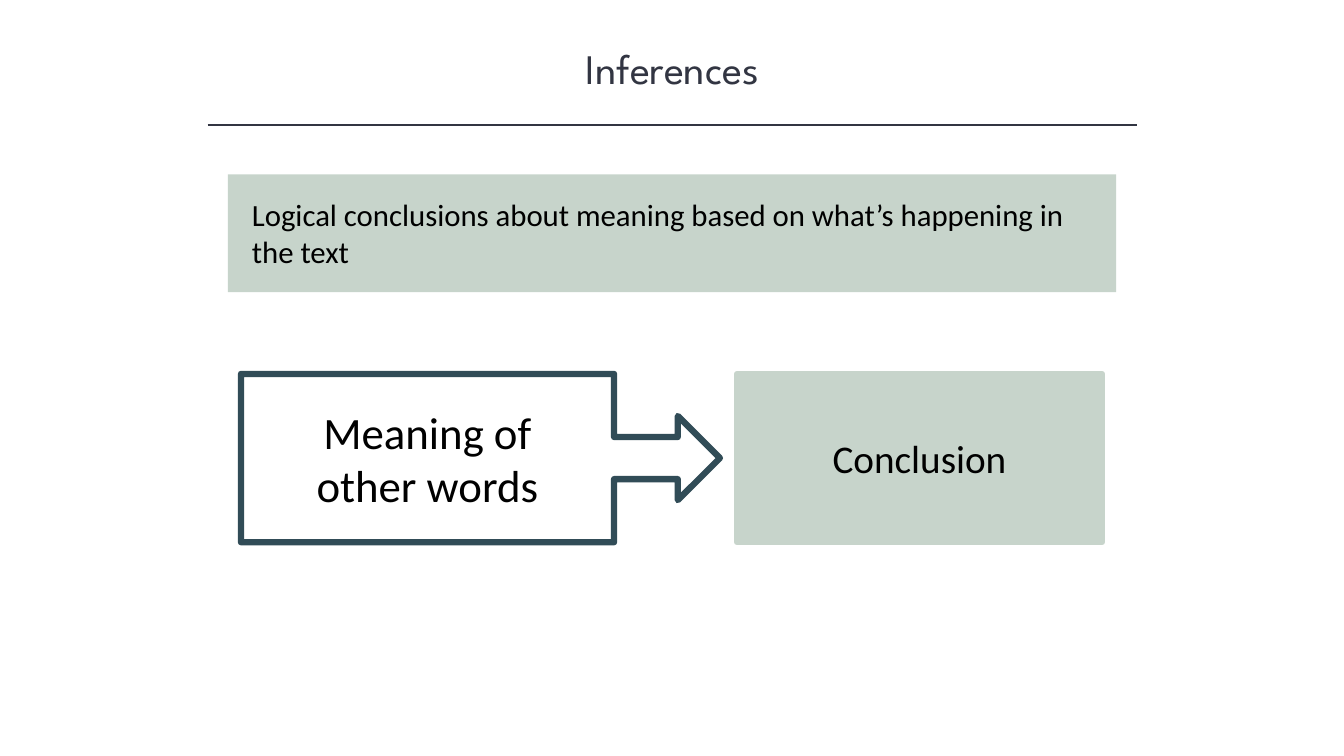
from pptx import Presentation
from pptx.dml.color import RGBColor
from pptx.enum import shapes, text
from pptx.oxml.ns import qn
from pptx.util import Inches, Pt
from lxml import etree

COLORS = {"ink": "323542", "sage": "C7D4CB", "teal": "314C57", "black": "000000"}
RECT = shapes.MSO_SHAPE.RECTANGLE
CALLOUT = shapes.MSO_SHAPE.RIGHT_ARROW_CALLOUT
LEFT, CENTER = text.PP_ALIGN.LEFT, text.PP_ALIGN.CENTER
TOP, MIDDLE = text.MSO_ANCHOR.TOP, text.MSO_ANCHOR.MIDDLE

# Content: box, lines, font, size, colour, alignment, anchor
TITLE = ((1.67, 0.37, 10, 0.61), ["Inferences"],
         "League Spartan", 30, "ink", CENTER, TOP)
RULE = (2.06, 1.24, 11.28, 1.24)
BAND = (2.26, 1.73, 8.81, 1.17)
DEFINITION = ((2.4, 1.89, 8.54, 0.84),
              ["Logical conclusions about meaning based on what’s happening in the text"],
              "Calibri", 22, "black", LEFT, TOP)
MEANING = ((2.39, 3.71, 4.75, 1.67), ["Meaning of", "other words"],
           "Calibri", 32, "black", CENTER, MIDDLE)
CONCLUSION = ((7.31, 3.71, 3.62, 1.67), ["Conclusion"],
              "Calibri", 28, "black", CENTER, MIDDLE)
ARROW_ADJUSTMENTS = (0.25, 0.25, 0.25, 0.779)


def rgb(name):
    return RGBColor.from_string(COLORS[name])


def add_box(s, box, kind=RECT, fill=None, line=None):
    sp = s.shapes.add_shape(kind, *map(Inches, box))
    sp.shadow.inherit = False
    if fill:
        sp.fill.solid()
        sp.fill.fore_color.rgb = rgb(fill)
    else:
        sp.fill.background()
    if line:
        sp.line.color.rgb = rgb(line)
        sp.line.width = Pt(4.5)
    else:
        sp.line.fill.background()
    return sp


def write(sp, lines, font, size, color, align, anchor):
    tf = sp.text_frame
    tf.word_wrap = True
    tf.vertical_anchor = anchor
    tf.text = "\n".join(lines)
    for p in tf.paragraphs:
        p.alignment = align
        for r in p.runs:
            r.font.name, r.font.size = font, Pt(size)
            r.font.color.rgb = rgb(color)


def main():
    prs = Presentation()
    prs.slide_width, prs.slide_height = Inches(13.33), Inches(7.5)
    s = prs.slides.add_slide(prs.slide_layouts[6])

    # Title and rule
    box, *words = TITLE
    write(s.shapes.add_textbox(*map(Inches, box)), *words)
    rule = s.shapes.add_connector(shapes.MSO_CONNECTOR.STRAIGHT, *map(Inches, RULE))
    rule.line.color.rgb = rgb("ink")
    rule.line.width = Pt(1)
    etree.SubElement(rule._element.spPr, qn("a:effectLst"))

    # Definition band
    add_box(s, BAND, fill="sage")
    box, *words = DEFINITION
    write(add_box(s, box, fill="sage"), *words)

    # Meaning leads to conclusion
    box, *words = MEANING
    sp = add_box(s, box, CALLOUT, line="teal")
    for i, value in enumerate(ARROW_ADJUSTMENTS):
        sp.adjustments[i] = value
    write(sp, *words)
    box, *words = CONCLUSION
    write(add_box(s, box, fill="sage", line="sage"), *words)

    prs.save("out.pptx")


if __name__ == "__main__":
    main()
